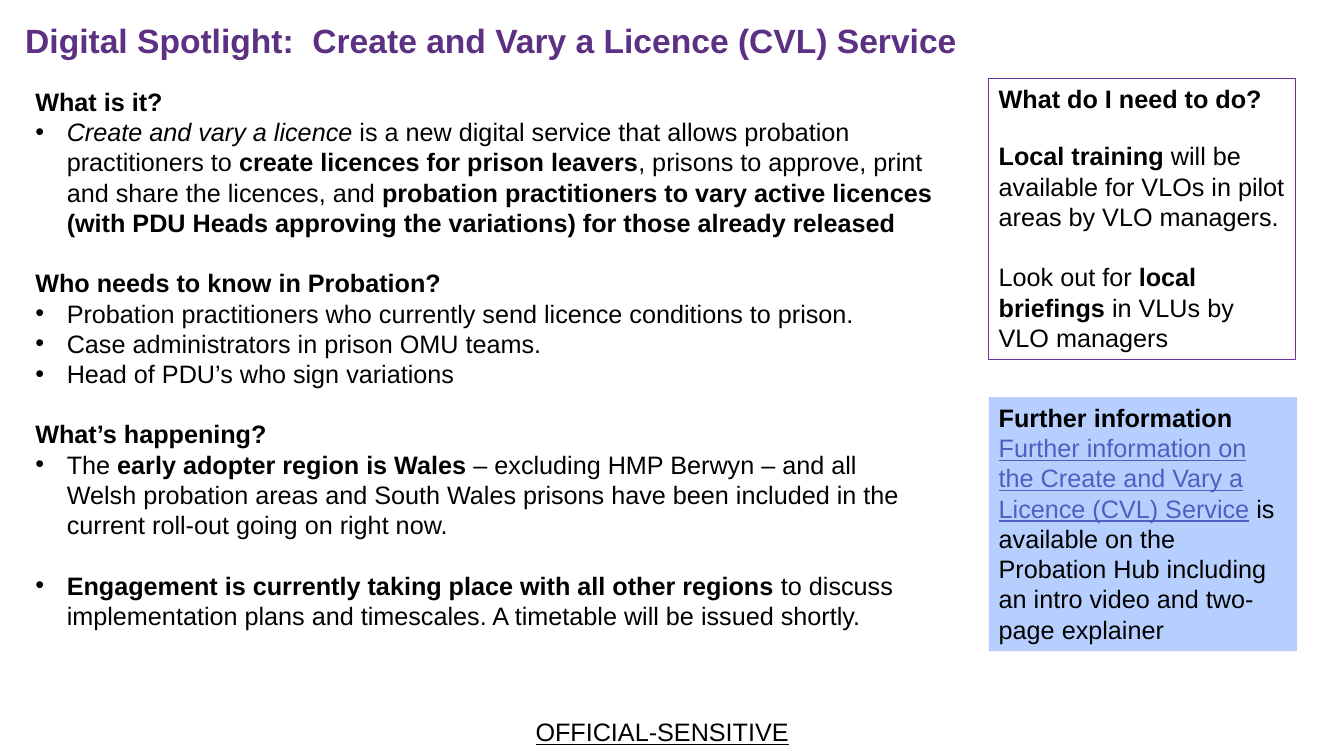
"""Build the Create and Vary a Licence spotlight slide."""
from dataclasses import dataclass
from typing import Optional

from lxml import etree
from pptx import Presentation
from pptx.dml.color import RGBColor
from pptx.enum.shapes import MSO_SHAPE
from pptx.enum.text import MSO_ANCHOR, MSO_AUTO_SIZE, PP_ALIGN
from pptx.oxml.ns import qn
from pptx.util import Pt

RECTANGLE = MSO_SHAPE.RECTANGLE
TOP, MIDDLE = MSO_ANCHOR.TOP, MSO_ANCHOR.MIDDLE
NO_AUTOFIT = MSO_AUTO_SIZE.NONE
LEFT, CENTER = PP_ALIGN.LEFT, PP_ALIGN.CENTER

FONT = "Arial"
COLORS = {
    "text": "000000",
    "title": "5C3183",
    "link": "505DC1",
    "border": "7030A0",
    "panel": "B7CFFF",
}
TEXT_SIZE, TITLE_SIZE = 18, 24
INDENT = 22.5
GAP, SMALL_GAP = 21.6, 19.2
MARGIN, PANEL_LEFT = 18, 706.32


@dataclass
class Run:
    text: str
    bold: bool = False
    italic: bool = False
    underline: bool = False
    color: str = "text"
    size: float = TEXT_SIZE


@dataclass
class Para:
    runs: list[Run]
    bullet: bool = False
    before: float = 0
    align: PP_ALIGN = LEFT
    line_spacing: float = 1.0


@dataclass
class Panel:
    top: float
    width: float
    height: float
    paras: list[Para]
    fill: Optional[str] = None
    line: Optional[str] = None


def heading(text: str, before: float = 0) -> Para:
    return Para([Run(text, bold=True)], before=before)


def bullet(*runs: Run, before: float = 0) -> Para:
    return Para(list(runs), bullet=True, before=before)


TITLE = [Para([Run("Digital Spotlight:  Create and Vary a Licence (CVL) Service",
                   bold=True, color="title", size=TITLE_SIZE)], line_spacing=0.9)]
BODY = [
    heading("What is it?"),
    bullet(
        Run("Create and vary a licence", italic=True),
        Run(" is a new digital service that allows probation practitioners to "),
        Run("create licences for prison leavers", bold=True),
        Run(", prisons to approve, print and share the licences, and "),
        Run("probation practitioners to vary active licences (with PDU Heads "
            "approving the variations) for those already released", bold=True),
    ),
    heading("Who needs to know in Probation?", GAP),
    bullet(Run("Probation practitioners who currently send licence conditions to prison.")),
    bullet(Run("Case administrators in prison OMU teams.")),
    bullet(Run("Head of PDU’s who sign variations")),
    heading("What’s happening?", GAP),
    bullet(
        Run("The "),
        Run("early adopter region is Wales ", bold=True),
        Run("– excluding HMP Berwyn – and all Welsh probation areas and South Wales "
            "prisons have been included in the current roll-out going on right now."),
    ),
    bullet(
        Run("Engagement is currently taking place with all other regions ", bold=True),
        Run("to discuss implementation plans and timescales. "
            "A timetable will be issued shortly."),
        before=GAP,
    ),
]
PANELS = [
    Panel(56.16, 218.88, 200.88, [
        heading("What do I need to do?"),
        Para([
            Run("Local training ", bold=True),
            Run("will be available for VLOs in pilot areas by VLO managers."),
        ], before=SMALL_GAP),
        Para([
            Run("Look out for"),
            Run(" local briefings", bold=True),
            Run(" in VLUs by VLO managers"),
        ], before=GAP),
    ], line="border"),
    Panel(283.68, 220.32, 181.44, [
        heading("Further information"),
        Para([
            Run("Further information on the Create and Vary a Licence (CVL) Service",
                underline=True, color="link"),
            Run(" is available on the Probation Hub including an intro video "
                "and two-page explainer"),
        ]),
    ], fill="panel"),
]
MARKING = [Para([Run("OFFICIAL-SENSITIVE", underline=True)], align=CENTER)]


def rgb(name: str) -> RGBColor:
    return RGBColor.from_string(COLORS[name])


def place(sp, left: float, top: float, width: float, height: float) -> None:
    sp.left, sp.top, sp.width, sp.height = Pt(left), Pt(top), Pt(width), Pt(height)


def set_bullet(p, shown: bool) -> None:
    pPr = p._p.get_or_add_pPr()
    indent = Pt(INDENT) if shown else 0
    pPr.set("marL", str(indent))
    pPr.set("indent", str(-indent))
    if shown:
        etree.SubElement(pPr, qn("a:buFont")).set("typeface", FONT)
        etree.SubElement(pPr, qn("a:buChar")).set("char", "•")
    else:
        etree.SubElement(pPr, qn("a:buNone"))


def write(tf, paras: list[Para], anchor: MSO_ANCHOR = TOP, wrap: bool = True) -> None:
    tf.auto_size = NO_AUTOFIT
    tf.word_wrap = wrap
    tf.vertical_anchor = anchor
    for i, para in enumerate(paras):
        p = tf.paragraphs[0] if i == 0 else tf.add_paragraph()
        set_bullet(p, para.bullet)
        p.alignment = para.align
        p.line_spacing = para.line_spacing
        p.space_before, p.space_after = Pt(para.before), Pt(0)
        for run in para.runs:
            r = p.add_run()
            r.text = run.text
            r.font.name, r.font.size = FONT, Pt(run.size)
            r.font.bold, r.font.italic = run.bold, run.italic
            r.font.underline = run.underline
            r.font.color.rgb = rgb(run.color)


def add_panel(slide, panel: Panel) -> None:
    sp = slide.shapes.add_shape(RECTANGLE, Pt(PANEL_LEFT), Pt(panel.top),
                                Pt(panel.width), Pt(panel.height))
    sp.shadow.inherit = False
    if panel.fill:
        sp.fill.solid()
        sp.fill.fore_color.rgb = rgb(panel.fill)
    else:
        sp.fill.background()
    if panel.line:
        sp.line.color.rgb = rgb(panel.line)
        sp.line.width = Pt(0.75)
    else:
        sp.line.fill.background()
    write(sp.text_frame, panel.paras)


def main() -> None:
    prs = Presentation()
    prs.slide_width, prs.slide_height = Pt(960), Pt(540)
    slide = prs.slides.add_slide(prs.slide_layouts[1])

    title, body = slide.shapes.title, slide.placeholders[1]
    place(title, MARGIN, 0.72, 907.2, 59.76)
    tf = title.text_frame
    tf.margin_left = tf.margin_top = tf.margin_right = tf.margin_bottom = 0
    write(tf, TITLE, MIDDLE)
    place(body, MARGIN, 56.16, 655.2, 399.6)
    write(body.text_frame, BODY, MIDDLE)

    for panel in PANELS:
        add_panel(slide, panel)

    marking = slide.shapes.add_textbox(Pt(374.4), Pt(508.32), Pt(197.28), Pt(28.8))
    write(marking.text_frame, MARKING, wrap=False)
    prs.save("out.pptx")


if __name__ == "__main__":
    main()
